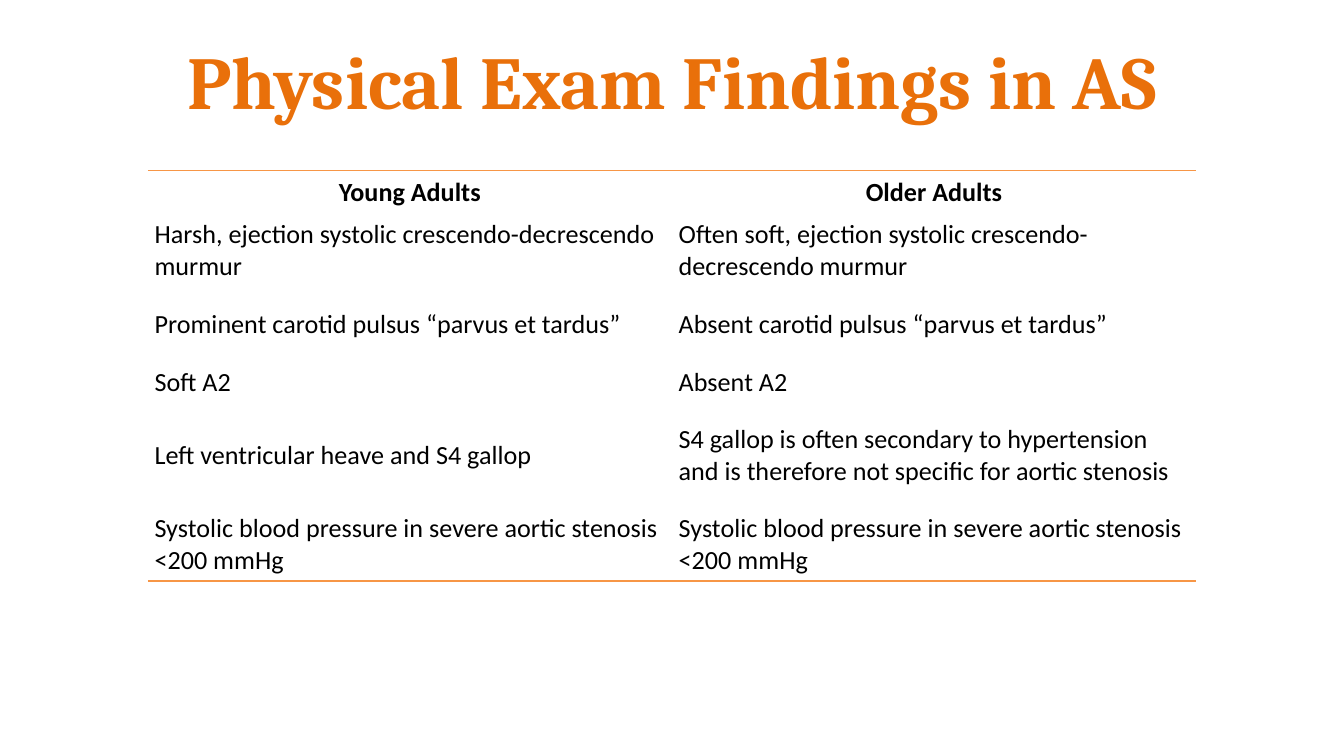
import pptx
import pptx.util
import pptx.dml.color
import pptx.enum.text
import pptx.oxml
import pptx.oxml.ns

TITLE = "Physical Exam Findings in AS"
# Row height in inches, young adults, older adults
ROWS = [
    (0.32, "Young Adults", "Older Adults"),
    (0.54, "Harsh, ejection systolic crescendo-decrescendo murmur",
     "Often soft, ejection systolic crescendo-decrescendo murmur"),
    (0.54, "Prominent carotid pulsus “parvus et tardus”",
     "Absent carotid pulsus “parvus et tardus”"),
    (0.32, "Soft A2", "Absent A2"),
    (0.77, "Left ventricular heave and S4 gallop",
     "S4 gallop is often secondary to hypertension and is therefore "
     "not specific for aortic stenosis"),
    (0.54, "Systolic blood pressure in severe aortic stenosis <200 mmHg",
     "Systolic blood pressure in severe aortic stenosis <200 mmHg"),
]
WIDE = 10
HIGH = WIDE * 9 / 16
LEFT, TOP, COL = 1.1, 1.27, 3.9
RULE = "F79646"
PLAIN = "{2D5ABB26-0587-4C30-8999-92F81FD0307C}"  # no style, no grid

inch = pptx.util.Inches
ALIGN = pptx.enum.text.PP_ALIGN
MIDDLE = pptx.enum.text.MSO_ANCHOR.MIDDLE


def color(code):
    return pptx.dml.color.RGBColor.from_string(code)


def style(para, face, size, code, bold, align):
    para.alignment = align
    for run in para.runs:
        run.font.name = face
        run.font.size = pptx.util.Pt(size)
        run.font.bold = bold
        run.font.color.rgb = color(code)


def border(cell, side):
    """Draw a one-point rule on side T or B of a cell."""
    line = pptx.oxml.parse_xml(
        f'<a:ln{side} {pptx.oxml.ns.nsdecls("a")} w="12700"><a:solidFill>'
        f'<a:srgbClr val="{RULE}"/></a:solidFill></a:ln{side}>')
    cell._tc.get_or_add_tcPr().insert(0, line)


deck = pptx.Presentation()
deck.slide_width, deck.slide_height = inch(WIDE), inch(HIGH)
slide = deck.slides.add_slide(deck.slide_layouts[5])

# Title
title = slide.shapes.title
title.left, title.top = inch(WIDE * 0.05), inch(0.12)
title.width, title.height = inch(WIDE * 0.9), inch(0.94)
title.text_frame.text = TITLE
title.text_frame.vertical_anchor = MIDDLE
style(title.text_frame.paragraphs[0], "Cambria", 40, "E9700A", True,
      ALIGN.CENTER)

# Findings table
total = sum(row[0] for row in ROWS)
table = slide.shapes.add_table(len(ROWS), 2, inch(LEFT), inch(TOP),
                               inch(2 * COL), inch(total)).table
table.horz_banding = False
table._tbl.tblPr.find(pptx.oxml.ns.qn("a:tableStyleId")).text = PLAIN
for r, (height, *texts) in enumerate(ROWS):
    table.rows[r].height = inch(height)
    head = r == 0
    for c, text in enumerate(texts):
        cell = table.cell(r, c)
        cell.text_frame.text = text
        cell.vertical_anchor = MIDDLE
        cell.margin_left = cell.margin_right = inch(0.05)
        cell.margin_top = cell.margin_bottom = inch(0.04)
        cell.fill.background()
        style(cell.text_frame.paragraphs[0], "Calibri", 14, "000000", head,
              ALIGN.CENTER if head else ALIGN.LEFT)

# Rules above and below the table
for c, col in enumerate(table.columns):
    col.width = inch(COL)
    border(table.cell(0, c), "T")
    border(table.cell(len(ROWS) - 1, c), "B")

deck.save("out.pptx")
